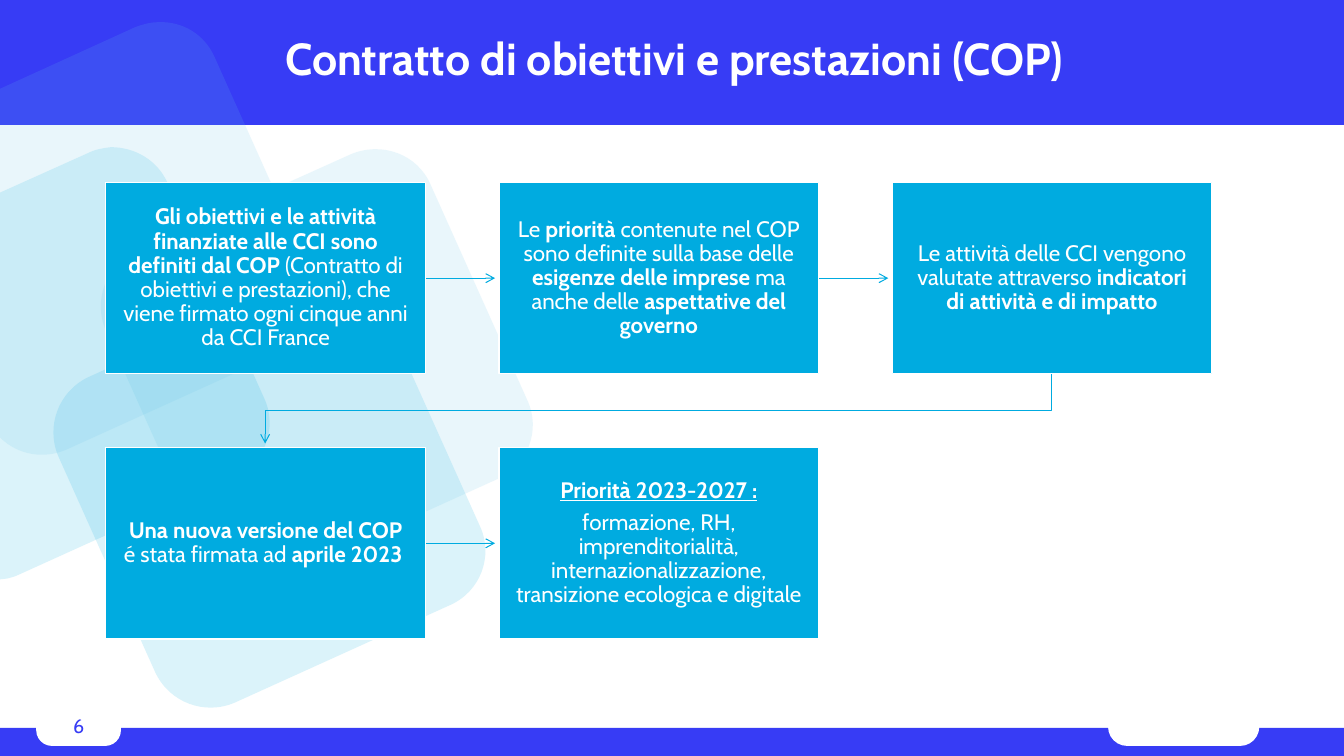
import pptx
import pptx.util
import pptx.dml.color
import pptx.enum.shapes
import pptx.enum.text
import pptx.oxml.ns
from lxml import etree

PX = 9144  # 100 px to the inch
RGB = pptx.dml.color.RGBColor.from_string
QN = pptx.oxml.ns.qn
SHAPE = pptx.enum.shapes.MSO_SHAPE
CENTER = pptx.enum.text.PP_ALIGN.CENTER
MIDDLE = pptx.enum.text.MSO_ANCHOR.MIDDLE
THEME = {
    "font": "Cabin", "band": "373CF5", "box": "00ABE0", "pale": "67C4E8", "white": "FFFFFF",
    "title": 32, "body": 16, "number": 14, "arrow": 0.75, "border": 0.85, "alpha": 14000,
}
FORMATS = {
    "plain": {"bold": False},
    "bold": {"bold": True},
    "heading": {"bold": True, "underline": True},
}


def add_run(p, text, size, color, fmt):
    r = p.add_run()
    r.text = text
    r.font.color.rgb = RGB(THEME[color])
    for name, value in {"name": THEME["font"], "size": pptx.util.Pt(THEME[size]), **FORMATS[fmt]}.items():
        setattr(r.font, name, value)


def add_block(kind, box, color):
    sp = s.shapes.add_shape(kind, *[v * PX for v in box])
    sp.shadow.inherit = False
    sp.fill.solid()
    sp.fill.fore_color.rgb = RGB(THEME[color])
    sp.line.fill.background()
    return sp


prs = pptx.Presentation()
prs.slide_width, prs.slide_height = 1333 * PX, 750 * PX
s = prs.slides.add_slide(prs.slide_layouts[5])

# Title band
add_block(SHAPE.RECTANGLE, (0, 0, 1333, 124), "band")

# Translucent tilted squares: a shared right side, then a left side that is whole or cut.
# A segment of one point is a line, one of three points is a curve.
RIGHT = [[(476, 522)], [(490, 552), (476, 587), (447, 600)]]
WHOLE = [[(233, 697)], [(203, 710), (168, 697), (154, 667)], [(58, 453)],
         [(45, 423), (58, 388), (88, 374)], [(301, 278)], [(332, 265), (367, 278), (380, 308)]]
CUT_LOW = [[(233, 697)], [(229, 699), (225, 700), (221, 701)], [(212, 702)], [(212, 319)],
           [(301, 279)], [(309, 275), (316, 274), (324, 273)], [(348, 273), (370, 286), (380, 308)]]
CUT_HIGH = [[(233, 697)], [(210, 707), (185, 702), (168, 686)], [(165, 683)], [(165, 340)],
            [(301, 278)], [(309, 275), (317, 273), (324, 273)], [(348, 272), (370, 285), (380, 308)]]
squares = [(0, 0, WHOLE, "box"), (47, -125, WHOLE, "pale"),
           (-214, -127, CUT_LOW, "box"), (-167, -251, CUT_HIGH, "pale")]
for dx, dy, left_side, color in squares:
    segments = RIGHT + left_side
    builder = s.shapes.build_freeform(380 + dx, 308 + dy, scale=PX)
    builder.add_line_segments([(x + dx, y + dy) for segment in segments for x, y in segment])
    sp = builder.convert_to_shape()
    lines = iter(list(sp._element.iter(QN("a:lnTo"))))
    for segment in segments:
        first, *others = [next(lines) for point in segment]
        if others:
            first.tag = QN("a:cubicBezTo")
        for other in others:
            first.append(other[0])
            other.getparent().remove(other)
    sp.shadow.inherit = False
    sp.line.fill.background()
    sp.fill.solid()
    sp.fill.fore_color.rgb = RGB(THEME[color])
    clr = sp._element.spPr.find(QN("a:solidFill"))[0]
    etree.SubElement(clr, QN("a:alpha"), val=str(THEME["alpha"]))

# Footer band with its two tabs
add_block(SHAPE.RECTANGLE, (-1, 722, 1335, 28), "band")
for box, rounding in [((36, 702, 84, 38), 0.41), ((1099, 702, 150, 38), 0.5)]:
    add_block(SHAPE.ROUNDED_RECTANGLE, box, "white").adjustments[0] = rounding

# Title, brought in front of the band
title = s.shapes.title
s.shapes._spTree.append(title._element)
title.left, title.top, title.width, title.height = [v * PX for v in (92, 1, 1154, 120)]
tf = title.text_frame
tf.vertical_anchor = MIDDLE
p = tf.paragraphs[0]
p.alignment, p.line_spacing = CENTER, 0.9
add_run(p, "Contratto di obiettivi e prestazioni (COP)", "title", "white", "bold")

# Page number
tf = s.shapes.add_textbox(*[v * PX for v in (29, 703, 98, 30)]).text_frame
tf.word_wrap = True
tf.paragraphs[0].alignment = CENTER
add_run(tf.paragraphs[0], "6", "number", "band", "plain")

# Steps: three to a row, each a list of paragraphs made of runs
W, H, X0, Y0, DX, DY, COLS = 317, 190, 105, 181, 390, 263, 3
steps = [
    [[("Gli obiettivi e le attività finanziate alle CCI sono definiti dal COP", "bold"),
      (" (Contratto di obiettivi e prestazioni), che viene firmato ogni cinque anni da CCI France", "plain")]],
    [[("Le ", "plain"), ("priorità", "bold"),
      (" contenute nel COP sono definite sulla base delle ", "plain"),
      ("esigenze delle imprese ", "bold"), ("ma anche delle ", "plain"),
      ("aspettative del governo", "bold")]],
    [[("Le attività delle CCI vengono valutate attraverso ", "plain"),
      ("indicatori di attività e di impatto", "bold")]],
    [[("Una nuova versione del COP ", "bold"), ("é stata firmata ad ", "plain"),
      ("aprile 2023 ", "bold")]],
    [[("Priorità 2023-2027 :", "heading")],
     [("formazione, RH, imprenditorialità, internazionalizzazione, transizione ecologica e digitale", "plain")]],
]
for i, paragraphs in enumerate(steps):
    x, y = X0 + i % COLS * DX, Y0 + i // COLS * DY

    # Arrow to the next step: straight in a row, bent to the next row
    if i < len(steps) - 1:
        if i % COLS < COLS - 1:
            mid = y + H // 2
            route = [(x + W, mid), (x + DX - 4, mid)]
        else:
            start, end, turn = x + W // 2, X0 + W // 2, y + (H + DY) // 2
            route = [(start, y + H), (start, turn), (end, turn), (end, y + DY - 4)]
        builder = s.shapes.build_freeform(*route[0], scale=PX)
        builder.add_line_segments(route[1:], close=False)
        arrow = builder.convert_to_shape()
        arrow.shadow.inherit = False
        arrow.fill.background()
        arrow.line.color.rgb = RGB(THEME["box"])
        arrow.line.width = pptx.util.Pt(THEME["arrow"])
        etree.SubElement(arrow.line._get_or_add_ln(), QN("a:tailEnd"), type="arrow")

    # Box with its text
    sp = add_block(SHAPE.RECTANGLE, (x, y, W, H), "box")
    sp.line.color.rgb = RGB(THEME["white"])
    sp.line.width = pptx.util.Pt(THEME["border"])
    tf = sp.text_frame
    tf.word_wrap, tf.vertical_anchor = True, MIDDLE
    for side in ("left", "right", "top", "bottom"):
        setattr(tf, "margin_" + side, 16 * PX)
    for k, runs in enumerate(paragraphs):
        p = tf.add_paragraph() if k else tf.paragraphs[0]
        p.alignment, p.line_spacing = CENTER, 0.9
        p.space_after = pptx.util.Pt(5.6)
        for text, fmt in runs:
            add_run(p, text, "body", "white", fmt)

prs.save("out.pptx")
